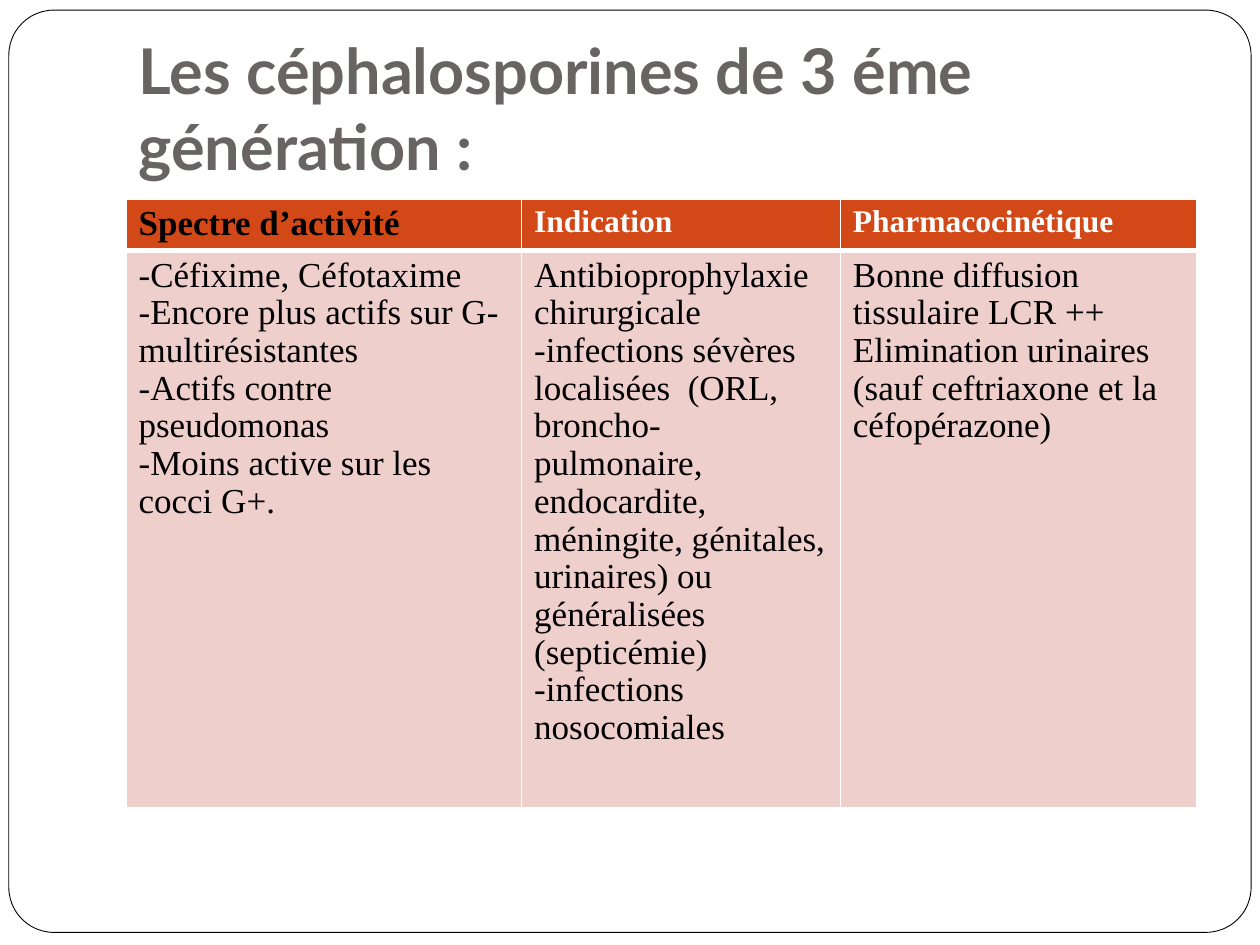
from lxml.etree import SubElement
from pptx import Presentation
from pptx.dml.color import RGBColor as Rgb
from pptx.enum.shapes import MSO_SHAPE as Shape
from pptx.enum.text import MSO_ANCHOR as Anchor, MSO_AUTO_SIZE as AutoSize, PP_ALIGN as Align
from pptx.oxml.ns import qn
from pptx.util import Inches, Pt

COLORS = {"paper": "FFFFFF", "ink": "000000", "title": "696464", "header": "D34817", "body": "EFCFCC"}
SIZE = (10, 7.5)
TITLE = "Les céphalosporines de 3 éme génération :"
COLUMNS = [
    (3.14, "Spectre d’activité", 20, "ink", [
        "-Céfixime, Céfotaxime",
        "-Encore plus actifs sur G- multirésistantes",
        "-Actifs contre pseudomonas",
        "-Moins active sur les cocci G+."]),
    (2.53, "Indication", 18, "paper", [
        "Antibioprophylaxie chirurgicale",
        "-infections sévères localisées  (ORL, broncho-pulmonaire, endocardite, méningite, "
        "génitales, urinaires) ou généralisées (septicémie)",
        "-infections nosocomiales"]),
    (2.83, "Pharmacocinétique", 18, "paper", [
        "Bonne diffusion tissulaire LCR ++",
        "Elimination urinaires (sauf ceftriaxone et la céfopérazone)"]),
]


def color(name):
    """Return the named colour."""
    return Rgb.from_string(COLORS[name])


def apply(target, values):
    """Set every attribute in a dict of format values."""
    for name, value in values.items():
        setattr(target, name, value)


def place(item, box):
    """Move an item to a box given in inches."""
    apply(item, dict(zip(("left", "top", "width", "height"), map(Inches, box))))


def write(frame, lines, font, tint, **layout):
    """Fill a text frame with one paragraph for each line."""
    for index, line in enumerate(lines):
        para = frame.paragraphs[0] if index == 0 else frame.add_paragraph()
        apply(para, {"alignment": Align.LEFT, **layout})
        span = para.add_run()
        span.text = line
        apply(span.font, font)
        span.font.color.rgb = color(tint)


def edge(cell, widths):
    """Draw white cell borders with the given widths in points."""
    props = cell._tc.get_or_add_tcPr()
    for index, (side, width) in enumerate(widths.items()):
        line = props.makeelement(qn(f"a:ln{side}"), {"w": str(Pt(width))})
        fill = SubElement(line, qn("a:solidFill"))
        SubElement(fill, qn("a:srgbClr"), val=COLORS["paper"])
        props.insert(index, line)


def add_frame(page, box):
    """Draw the rounded page frame behind everything else."""
    frame = page.shapes.add_shape(Shape.ROUNDED_RECTANGLE, *map(Inches, box))
    frame.adjustments[0] = 0.049
    frame.shadow.inherit = False
    frame.fill.solid()
    frame.fill.fore_color.rgb = color("paper")
    frame.line.color.rgb = color("ink")
    frame.line.width = Pt(0.5)
    page.shapes._spTree.insert(2, frame._element)


def add_title(page, box):
    """Place and format the title placeholder."""
    title = page.shapes.title
    place(title, box)
    apply(title.text_frame, {
        "word_wrap": True, "auto_size": AutoSize.NONE, "vertical_anchor": Anchor.BOTTOM,
        "margin_left": Inches(0.1), "margin_right": Inches(0.1),
        "margin_top": Inches(0.05), "margin_bottom": Inches(0.1)})
    write(title.text_frame, [TITLE], {"name": "Lato", "size": Pt(36), "bold": True}, "title")


def add_grid(page, box, header_height):
    """Build the table with a header row and a body row."""
    table = page.shapes.add_table(2, len(COLUMNS), *map(Inches, box)).table
    table.horz_banding = False
    for row, height in zip(table.rows, (header_height, box[3] - header_height)):
        row.height = Inches(height)
    for index, (width, heading, size, tint, lines) in enumerate(COLUMNS):
        table.columns[index].width = Inches(width)
        rows = [("header", [heading], size, tint, True), ("body", lines, 20, "ink", False)]
        for row, (fill, texts, points, ink, bold) in enumerate(rows):
            cell = table.cell(row, index)
            cell.fill.solid()
            cell.fill.fore_color.rgb = color(fill)
            font = {"name": "Times New Roman", "size": Pt(points), "bold": bold}
            write(cell.text_frame, texts, font, ink, line_spacing=0.97)
            edge(cell, {"L": 1, "R": 1, "T": 3 if row else 1, "B": 1 if row else 3})


def main():
    """Build and save the deck."""
    deck = Presentation()
    deck.slide_width, deck.slide_height = map(Inches, SIZE)
    page = deck.slides.add_slide(deck.slide_layouts[5])
    wide, high = SIZE
    left, span = wide * 0.1, wide * 0.85
    add_frame(page, (0.07, 0.08, 9.86, 7.32))
    add_title(page, (left, high * 0.04, span, 1.25))
    add_grid(page, (left, 1.58, span, 4.83), 0.41)
    deck.save("out.pptx")


if __name__ == "__main__":
    main()
